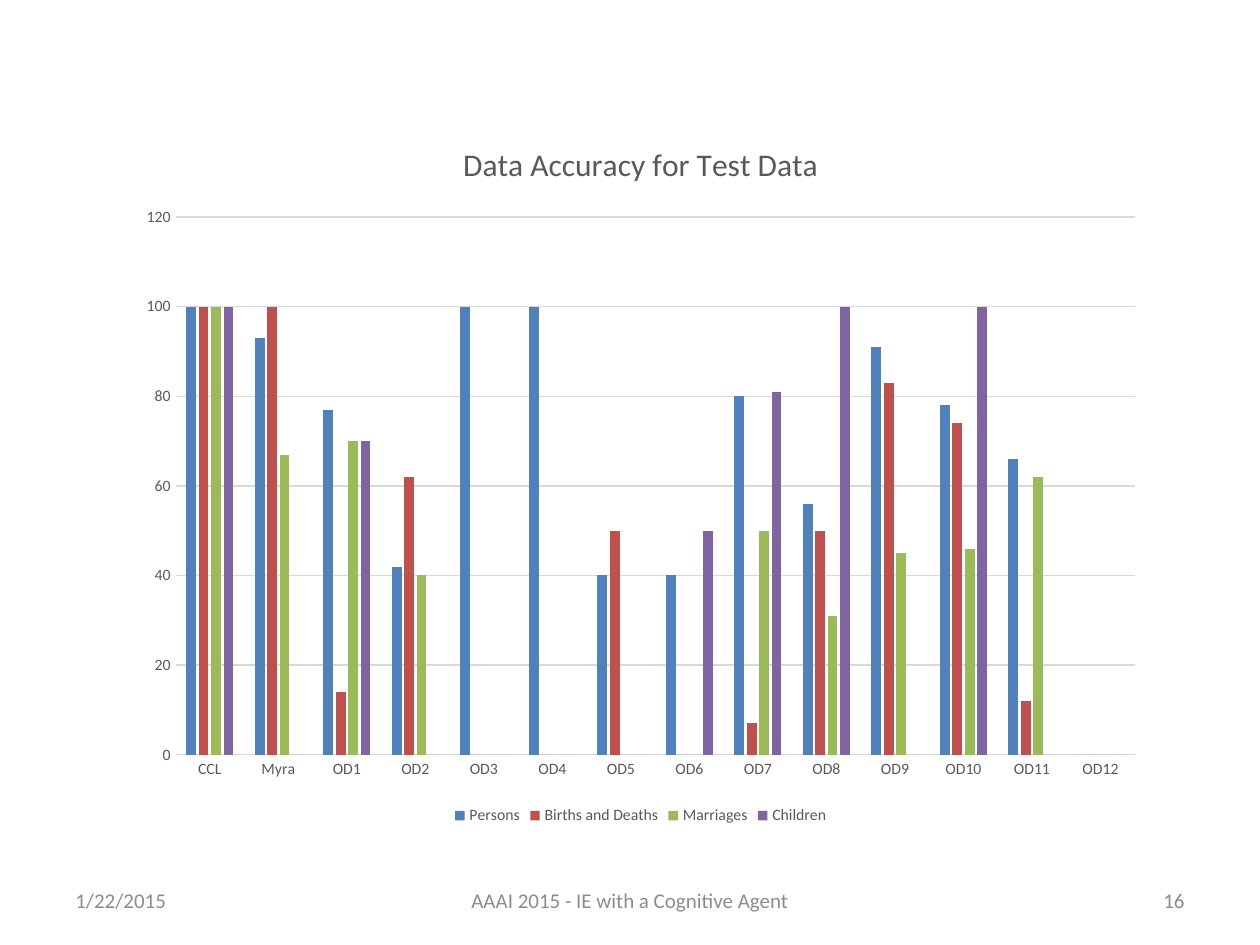
from dataclasses import dataclass

from pptx import Presentation
from pptx.chart.data import CategoryChartData
from pptx.dml.color import RGBColor
from pptx.enum.chart import XL_CHART_TYPE, XL_LEGEND_POSITION, XL_TICK_MARK
from pptx.enum.text import MSO_ANCHOR, PP_ALIGN
from pptx.util import Cm, Pt

COLUMNS = XL_CHART_TYPE.COLUMN_CLUSTERED
BOTTOM = XL_LEGEND_POSITION.BOTTOM
NO_TICK = XL_TICK_MARK.NONE
MIDDLE = MSO_ANCHOR.MIDDLE
LEFT, CENTER, RIGHT = PP_ALIGN.LEFT, PP_ALIGN.CENTER, PP_ALIGN.RIGHT

FONT = "Calibri"
LABEL_COLOR = "595959"
RULE_COLOR = "D9D9D9"
FOOTER_COLOR = "8C8C8C"


@dataclass
class FooterField:
    text: str
    left: float
    width: float
    align: PP_ALIGN


@dataclass
class Measure:
    name: str
    color: str
    accuracy: list[int]


FOOTER = [
    FooterField("1/22/2015", 1.27, 5.93, LEFT),
    FooterField("AAAI 2015 - IE with a Cognitive Agent", 8.68, 8.04, CENTER),
    FooterField("16", 18.2, 5.93, RIGHT),
]
DOCUMENTS = ["CCL", "Myra"] + [f"OD{number}" for number in range(1, 13)]
MEASURES = [
    Measure("Persons", "4F81BD", [100, 93, 77, 42, 100, 100, 40, 40, 80, 56, 91, 78, 66, 0]),
    Measure("Births and Deaths", "C0504D", [100, 100, 14, 62, 0, 0, 50, 0, 7, 50, 83, 74, 12, 0]),
    Measure("Marriages", "9BBB59", [100, 67, 70, 40, 0, 0, 0, 0, 50, 31, 45, 46, 62, 0]),
    Measure("Children", "8064A2", [100, 0, 70, 0, 0, 0, 0, 50, 81, 100, 0, 100, 0, 0]),
]


def rgb(color: str) -> RGBColor:
    return RGBColor.from_string(color)


def style_font(font, size: float, color: str) -> None:
    font.name = FONT
    font.size = Pt(size)
    font.bold = False
    font.color.rgb = rgb(color)


def style_rule(line) -> None:
    line.color.rgb = rgb(RULE_COLOR)
    line.width = Pt(0.75)


def draw_footer_field(slide, field: FooterField) -> None:
    box = slide.shapes.add_textbox(Cm(field.left), Cm(17.65), Cm(field.width), Cm(1.01))
    frame = box.text_frame
    frame.word_wrap = True
    frame.vertical_anchor = MIDDLE
    frame.text = field.text
    paragraph = frame.paragraphs[0]
    paragraph.alignment = field.align
    style_font(paragraph.runs[0].font, 12, FOOTER_COLOR)


def style_axis(axis) -> None:
    axis.major_tick_mark = NO_TICK
    axis.minor_tick_mark = NO_TICK
    style_font(axis.tick_labels.font, 9, LABEL_COLOR)


def draw_accuracy_chart(slide, title: str, measures: list[Measure]) -> None:
    data = CategoryChartData()
    data.categories = DOCUMENTS
    for measure in measures:
        data.add_series(measure.name, measure.accuracy)
    chart = slide.shapes.add_chart(
        COLUMNS, Cm(2.54), Cm(2.33), Cm(20.75), Cm(14.4), data
    ).chart
    style_font(chart.font, 10, "000000")

    chart.has_title = True
    heading = chart.chart_title.text_frame
    heading.text = title
    style_font(heading.paragraphs[0].runs[0].font, 18, LABEL_COLOR)
    chart.chart_title.include_in_layout = False

    chart.has_legend = True
    chart.legend.position = BOTTOM
    chart.legend.include_in_layout = False
    style_font(chart.legend.font, 9, LABEL_COLOR)

    style_axis(chart.category_axis)
    style_rule(chart.category_axis.format.line)
    accuracy_axis = chart.value_axis
    style_axis(accuracy_axis)
    accuracy_axis.minimum_scale = 0
    accuracy_axis.maximum_scale = 120
    accuracy_axis.major_unit = 20
    accuracy_axis.format.line.fill.background()
    accuracy_axis.has_major_gridlines = True
    style_rule(accuracy_axis.major_gridlines.format.line)

    plot = chart.plots[0]
    plot.vary_by_categories = False
    plot.gap_width = 219
    plot.overlap = -27
    for series, measure in zip(plot.series, measures):
        series.format.fill.solid()
        series.format.fill.fore_color.rgb = rgb(measure.color)


def main() -> None:
    deck = Presentation()
    deck.slide_width = Cm(25.4)
    deck.slide_height = Cm(19.05)
    slide = deck.slides.add_slide(deck.slide_layouts[6])
    for field in FOOTER:
        draw_footer_field(slide, field)
    draw_accuracy_chart(slide, "Data Accuracy for Test Data", MEASURES)
    deck.save("out.pptx")


if __name__ == "__main__":
    main()
